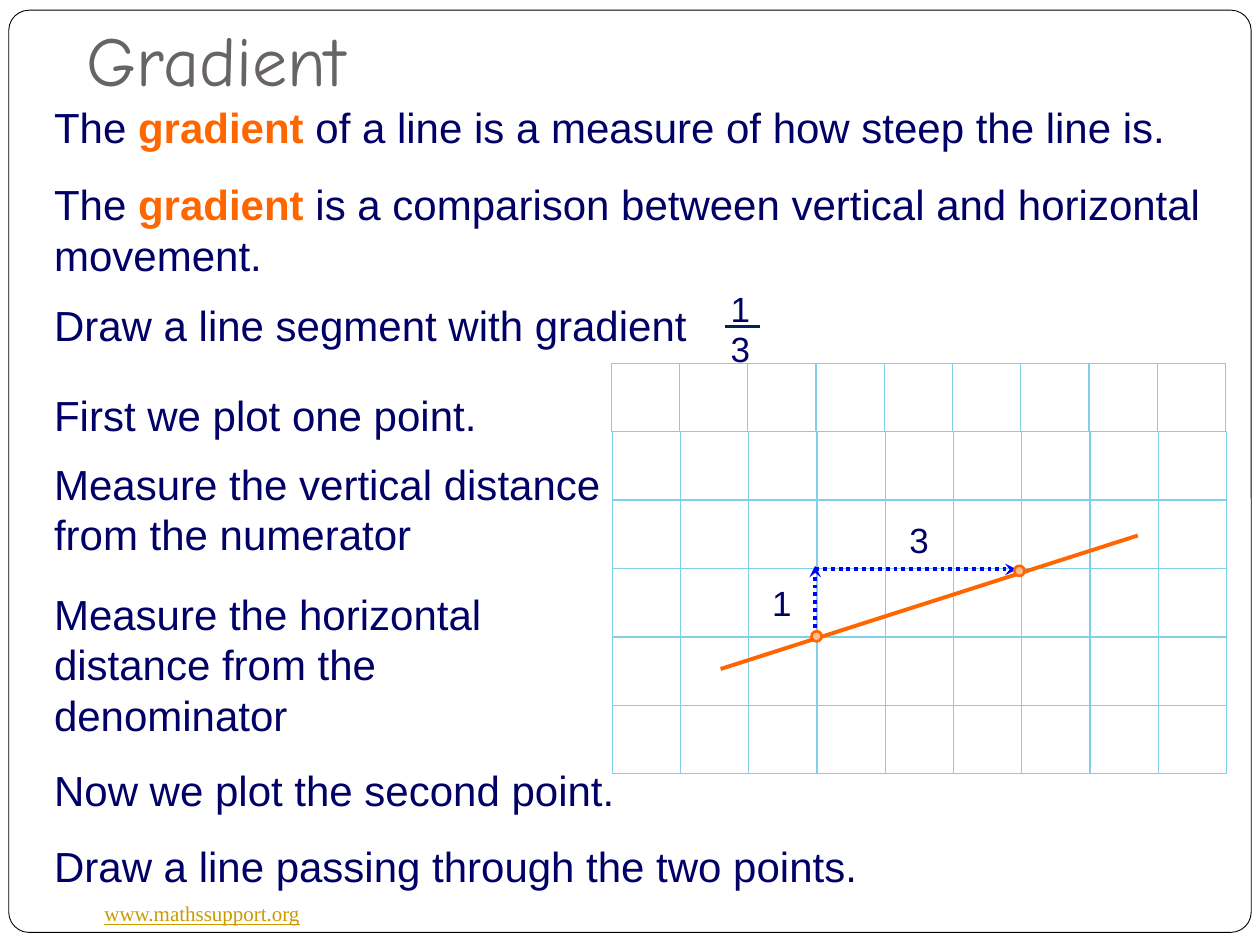
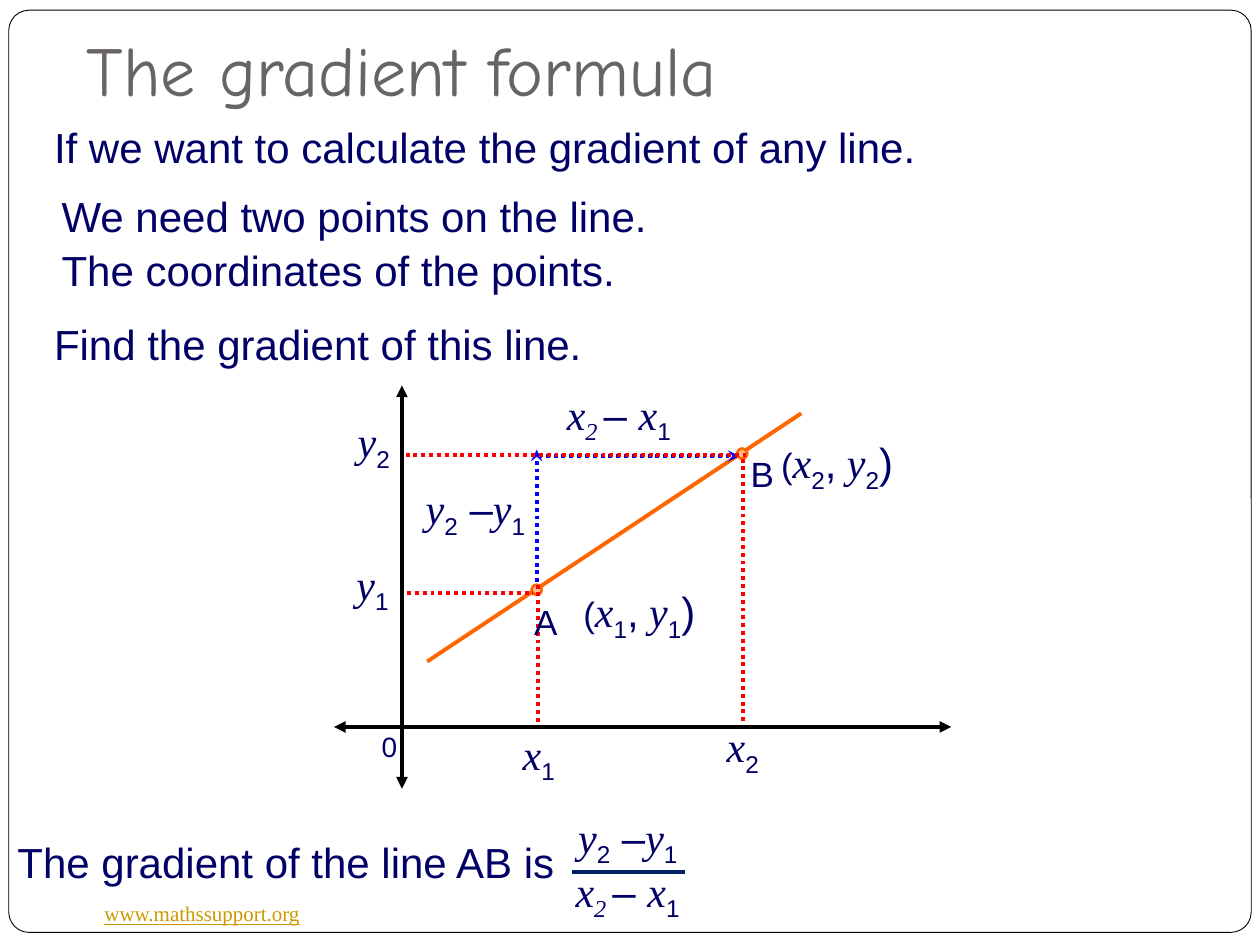
from pptx import Presentation
from pptx.dml.color import RGBColor
from pptx.enum.dml import MSO_LINE
from pptx.enum.shapes import MSO_CONNECTOR, MSO_SHAPE
from pptx.enum.text import MSO_ANCHOR, MSO_AUTO_SIZE
from pptx.oxml.ns import qn
from pptx.util import Pt
from lxml.etree import SubElement


class Theme:
    navy, orange, peach, grey = "010066", "FF6600", "FFBC8F", "696464"
    blue, red, black, white = "0000FF", "FF0000", "000000", "FFFFFF"
    bar, grid, gold = "002060", "80D0E8", "CC9900"
    sans, serif, hand = "Arial", "Times New Roman", "Comic Neue"
    title, body, label, small, footer = 40, 24, 20, 16, 12


body = dict(name=Theme.sans, size=Pt(Theme.body), color=Theme.navy)
key = dict(body, color=Theme.orange, bold=True)
label = dict(body, size=Pt(Theme.label))
small = dict(body, size=Pt(Theme.small))
var = dict(body, name=Theme.serif, italic=True)
sub = dict(body, baseline="-25000")
var_sub = dict(var, baseline="-25000")
title = dict(name=Theme.hand, size=Pt(Theme.title), color=Theme.grey)
footer = dict(name=Theme.serif, size=Pt(Theme.footer), color=Theme.gold, underline=True)

rise = [("y", var), ("2", sub), (" –", body), ("y", var), ("1", sub)]
run = [("x", var), ("2 ", var_sub), ("– ", body), ("x", var), ("1", sub)]
point_a, point_b = [
    [("(", label), ("x", var), (n, sub), (",", body), (" y", var), (n, sub), (")", body)]
    for n in "12"
]


def add_text(s, x, y, w, h, runs, wrap=False):
    tf = s.shapes.add_textbox(Pt(x), Pt(y), Pt(w), Pt(h)).text_frame
    tf.word_wrap = wrap
    tf.auto_size = MSO_AUTO_SIZE.SHAPE_TO_FIT_TEXT
    for text, style in runs:
        r = tf.paragraphs[0].add_run()
        r.text = text
        for name, value in style.items():
            if name == "color":
                r.font.color.rgb = RGBColor.from_string(value)
            elif name == "baseline":
                r.font.size = style["size"]
                r._r.get_or_add_rPr().set("baseline", value)
            else:
                setattr(r.font, name, value)
    return tf


def add_line(s, x1, y1, x2, y2, color, width=2.25, dotted=False, head=None, tail=None):
    c = s.shapes.add_connector(MSO_CONNECTOR.STRAIGHT, Pt(x1), Pt(y1), Pt(x2), Pt(y2))
    c.line.color.rgb = RGBColor.from_string(color)
    c.line.width = Pt(width)
    if dotted:
        c.line.dash_style = MSO_LINE.ROUND_DOT
    ln = c.line._get_or_add_ln()
    for tag, end in (("a:headEnd", head), ("a:tailEnd", tail)):
        if end:
            SubElement(ln, qn(tag)).set("type", end)
    SubElement(c._element.spPr, qn("a:effectLst"))


prs = Presentation()
prs.slide_width, prs.slide_height = Pt(720), Pt(540)

cells = [
    (MSO_SHAPE.RECTANGLE, 349.9 + 39 * col - (0.6 if row == 0 else 0), 207.6 + 39.1 * row,
     39, 39, Theme.white, Theme.grid, 0.75)
    for row in range(6) for col in range(9)
]
frame = (MSO_SHAPE.ROUNDED_RECTANGLE, 5, 5.8, 710, 527, Theme.white, Theme.black, 0.5)
dots_1, dots_2 = [
    [(MSO_SHAPE.OVAL, x, y, 5.8, 5.8, Theme.peach, Theme.orange, 1.5) for x, y in spots]
    for spots in ([(463.7, 360.7), (579.6, 323.3)], [(421.2, 256.3), (303.8, 334.1)])
]
dotted_blue = dict(color=Theme.blue, dotted=True)
dotted_red = dict(color=Theme.red, dotted=True)
axis = dict(color=Theme.black, head="triangle", tail="triangle")
fraction_bar = dict(color=Theme.bar, width=2)

slides = [
    dict(
        title="Gradient", title_y=-2.2, backdrop=[frame] + cells, dots=dots_1,
        lines=[
            (650.2, 306, 411.8, 382.3, dict(color=Theme.orange)),
            (465.8, 325.4, 581, 325.4, dict(dotted_blue, tail="stealth")),
            (465.8, 323.3, 465.8, 366.5, dict(dotted_blue, head="stealth")),
            (414, 186.5, 434.2, 186.5, fraction_bar),
        ],
        guides=[],
        texts=[
            (23.8, 54.7, 649.4, 36, [("The ", body), ("gradient", key),
             (" of a line is a measure of how steep the line is.", body)]),
            (23.8, 98.6, 687.6, 65.5, [("The ", body), ("gradient", key),
             (" is a comparison between vertical and horizontal movement.", body)], True),
            (23.8, 167.8, 400.3, 36, [("Draw a line segment with gradient", body)]),
            (434.2, 329, 25.9, 31.7, [("1", label)]),
            (512.6, 293, 25.9, 31.7, [("3", label)]),
            (410.4, 160.6, 25.9, 31.7, [("1", label)]),
            (410.4, 183.6, 25.9, 31.7, [("3", label)]),
            (23.8, 218.9, 265, 36, [("First we plot one point.", body)]),
            (23.8, 258.5, 331.9, 65.5,
             [("Measure the vertical distance from the numerator", body)], True),
            (23.8, 332.6, 328.3, 94.3,
             [("Measure the horizontal distance from the denominator", body)], True),
            (23.8, 433.4, 344.9, 36, [("Now we plot the second point.", body)]),
            (23.8, 476.6, 649.4, 36, [("Draw a line passing through the two points.", body)], True),
        ],
    ),
    dict(
        title="The gradient formula", title_y=3.6, backdrop=[frame], dots=dots_2,
        lines=[
            (244.1, 378, 457.9, 236.2, dict(color=Theme.orange)),
            (307.4, 260.6, 422.6, 260.6, dict(dotted_blue, tail="stealth")),
            (306.7, 257, 306.7, 336.2, dict(dotted_blue, head="stealth")),
            (326.9, 498.2, 391.7, 498.2, fraction_bar),
            (229.7, 450.7, 229.7, 220.3, axis),
            (190.8, 415.4, 543.6, 415.4, axis),
        ],
        guides=[
            (424.8, 262.1, 424.8, 413.3, dotted_red),
            (307.4, 334.1, 307.4, 413.3, dotted_red),
            (232.6, 339.1, 304.6, 339.1, dotted_red),
            (231.8, 259.9, 426.2, 259.9, dotted_red),
        ],
        texts=[
            (23.8, 66.2, 511.9, 36, [("If we want to calculate the gradient of any line.", body)]),
            (28.1, 105.1, 354.2, 36, [("We need two points on the line.", body)], True),
            (28.1, 136.1, 354.2, 36, [("The coordinates of the points.", body)], True),
            (23.8, 178.6, 333.4, 36, [("Find the gradient of this line.", body)]),
            (298.1, 339.8, 28.1, 31.7, [("A", label)]),
            (421.9, 254.9, 34.6, 31.7, [("B", label)], True),
            (2.9, 474.5, 331.2, 36, [("The gradient of the line AB is", body)]),
            (211, 413.3, 23, 26.6, [("0", small)]),
            (291.6, 412.6, 34.6, 36, [("x", var), ("1", sub)]),
            (408.2, 408.2, 34.6, 36, [("x", var), ("2", sub)]),
            (197.3, 234, 34.6, 36, [("y", var), ("2", sub)]),
            (196.6, 315.4, 34.6, 36, [("y", var), ("1", sub)]),
            (236.2, 272.2, 74.2, 36, rise),
            (316.8, 218.2, 77.8, 36, run),
            (326.2, 331.2, 87.8, 36, point_a),
            (439.2, 246.2, 87.8, 36, point_b),
            (323.3, 460.1, 74.2, 36, rise),
            (321.8, 491, 77.8, 36, run),
        ],
    ),
]

for page in slides:
    s = prs.slides.add_slide(prs.slide_layouts[6])
    for layer, lines in ((page["backdrop"], page["lines"]), (page["dots"], page["guides"])):
        for kind, x, y, w, h, fill, line, width in layer:
            sp = s.shapes.add_shape(kind, Pt(x), Pt(y), Pt(w), Pt(h))
            sp.shadow.inherit = False
            sp.fill.solid()
            sp.fill.fore_color.rgb = RGBColor.from_string(fill)
            sp.line.color.rgb = RGBColor.from_string(line)
            sp.line.width = Pt(width)
            if kind == MSO_SHAPE.ROUNDED_RECTANGLE:
                sp.adjustments[0] = 0.022
        for x1, y1, x2, y2, look in lines:
            add_line(s, x1, y1, x2, y2, **look)
    tf = add_text(s, 42.5, page["title_y"], 648, 67, [(page["title"], title)], True)
    for name, value in dict(auto_size=MSO_AUTO_SIZE.NONE, vertical_anchor=MSO_ANCHOR.BOTTOM,
                            margin_bottom=Pt(7.2)).items():
        setattr(tf, name, value)
    add_text(s, 52.6, 511.2, 127.4, 21.6, [("www.mathssupport.org", footer)])
    for item in page["texts"]:
        add_text(s, *item)

prs.save("out.pptx")
